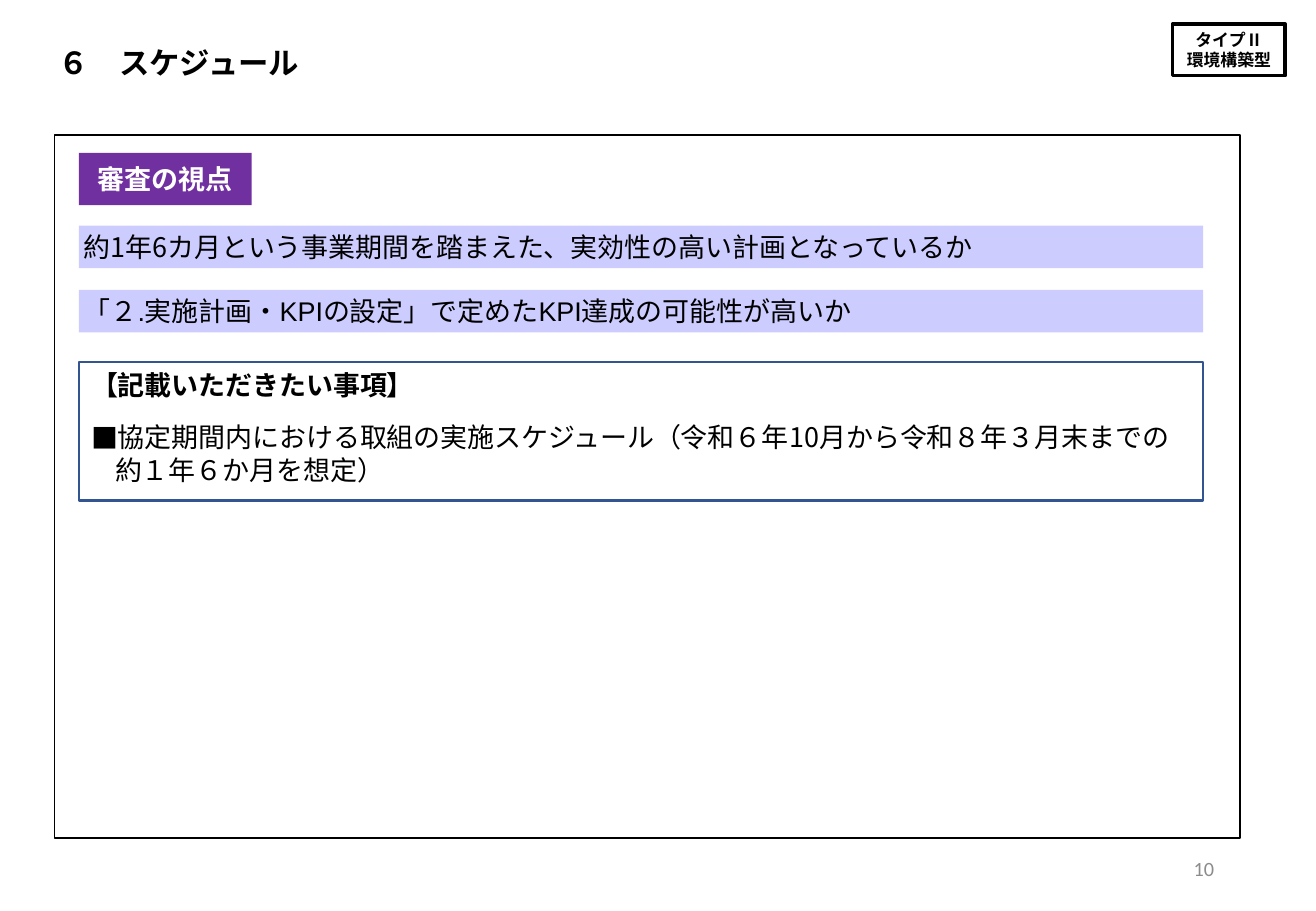
from lxml.etree import SubElement
from pptx import Presentation
from pptx.dml.color import RGBColor
from pptx.enum.shapes import MSO_SHAPE
from pptx.enum.text import MSO_ANCHOR, MSO_AUTO_SIZE, PP_ALIGN
from pptx.oxml.ns import qn
from pptx.util import Cm, Pt

BLACK = RGBColor(0x00, 0x00, 0x00)
WHITE = RGBColor(0xFF, 0xFF, 0xFF)
PURPLE = RGBColor(0x70, 0x30, 0xA0)
LAVENDER = RGBColor(0xCC, 0xCC, 0xFF)
NAVY = RGBColor(0x32, 0x54, 0x91)
GREY = RGBColor(0x8C, 0x8C, 0x8C)
NOTO = "Noto Sans CJK JP"
LEFT, WIDTH = Cm(1.65), Cm(23.5)


def add_text(p, text, size, font="Arial", color=BLACK, bold=False, align=PP_ALIGN.LEFT):
    p.alignment = align
    r = p.add_run()
    r.text = text
    r.font.size, r.font.name, r.font.bold = Pt(size), font, bold
    r.font.color.rgb = color
    SubElement(r.font._element, qn("a:ea")).set("typeface", NOTO)


def add_rect(left, top, width, height, fill=None, line=None, weight=1):
    sp = s.shapes.add_shape(MSO_SHAPE.RECTANGLE, left, top, width, height)
    sp.shadow.inherit = False
    if fill is None:
        sp.fill.background()
    else:
        sp.fill.solid()
        sp.fill.fore_color.rgb = fill
    if line is None:
        sp.line.fill.background()
    else:
        sp.line.color.rgb = line
        sp.line.width = Pt(weight)
    tf = sp.text_frame
    tf.margin_left = tf.margin_right = tf.margin_top = tf.margin_bottom = Cm(0.1)
    tf.vertical_anchor = MSO_ANCHOR.MIDDLE
    return sp


prs = Presentation()
prs.slide_width, prs.slide_height = Cm(27.51), Cm(19.05)
s = prs.slides.add_slide(prs.slide_layouts[1])
title, body = s.placeholders

# Title
title.left, title.top, title.width, title.height = Cm(1.12), Cm(0.81), Cm(10.29), Cm(0.97)
tf = title.text_frame
tf.margin_left = tf.margin_right = tf.margin_top = tf.margin_bottom = Cm(0.1)
tf.vertical_anchor = MSO_ANCHOR.MIDDLE
tf.auto_size = MSO_AUTO_SIZE.NONE
add_text(tf.paragraphs[0], "６\u3000スケジュール\u3000".replace("\u3000", "　"), 18, "Calibri", bold=True)

# Type tag
tf = add_rect(Cm(24.51), Cm(0.51), Cm(2.36), Cm(1.07), line=BLACK, weight=2.25).text_frame
add_text(tf.paragraphs[0], "タイプⅡ", 10, bold=True, align=PP_ALIGN.CENTER)
add_text(tf.add_paragraph(), "環境構築型", 10, bold=True, align=PP_ALIGN.CENTER)

# Outer frame
add_rect(Cm(1.14), Cm(2.82), Cm(24.79), Cm(14.71), WHITE, BLACK)

# Review heading and criteria
sp = add_rect(LEFT, Cm(3.2), Cm(3.61), Cm(1.09), PURPLE)
add_text(sp.text_frame.paragraphs[0], "審査の視点", 16, color=WHITE, bold=True, align=PP_ALIGN.CENTER)
criteria = [
    ("約1年6カ月という事業期間を踏まえた、実効性の高い計画となっているか", NOTO),
    ("「２.実施計画・KPIの設定」で定めたKPI達成の可能性が高いか", "Arial"),
]
for i, (text, font) in enumerate(criteria):
    sp = add_rect(LEFT, Cm(4.72 + 1.34 * i), WIDTH, Cm(0.89), LAVENDER)
    add_text(sp.text_frame.paragraphs[0], text, 16, font)

# Requested items, brought in front of the frame
body.element.getparent().append(body.element)
body.left, body.top, body.width, body.height = LEFT, Cm(7.57), WIDTH, Cm(2.9)
body.fill.solid()
body.fill.fore_color.rgb = WHITE
body.line.color.rgb = NAVY
body.line.width = Pt(1.5)
tf = body.text_frame
tf.vertical_anchor = MSO_ANCHOR.TOP
tf.auto_size = MSO_AUTO_SIZE.NONE
heading, item = tf.paragraphs[0], tf.add_paragraph()
add_text(heading, "【記載いただきたい事項】", 16, bold=True)
add_text(item, "協定期間内における取組の実施スケジュール（令和６年10月から令和８年３月末までの約１年６か月を想定）", 16, NOTO)
for p, indent, bullet in [(heading, 0, None), (item, Cm(0.5), "■")]:
    p.space_before = Pt(12)
    pPr = p._p.get_or_add_pPr()
    pPr.set("marL", str(indent))
    pPr.set("indent", str(-indent))
    if bullet:
        SubElement(pPr, qn("a:buFont")).set("typeface", NOTO)
        SubElement(pPr, qn("a:buChar")).set("char", bullet)
    else:
        SubElement(pPr, qn("a:buNone"))

# Page number
tf = s.shapes.add_textbox(Cm(19.43), Cm(17.65), Cm(6.2), Cm(1.02)).text_frame
tf.word_wrap = True
tf.vertical_anchor = MSO_ANCHOR.MIDDLE
add_text(tf.paragraphs[0], "10", 12, "Calibri", GREY, align=PP_ALIGN.RIGHT)

prs.save("out.pptx")
